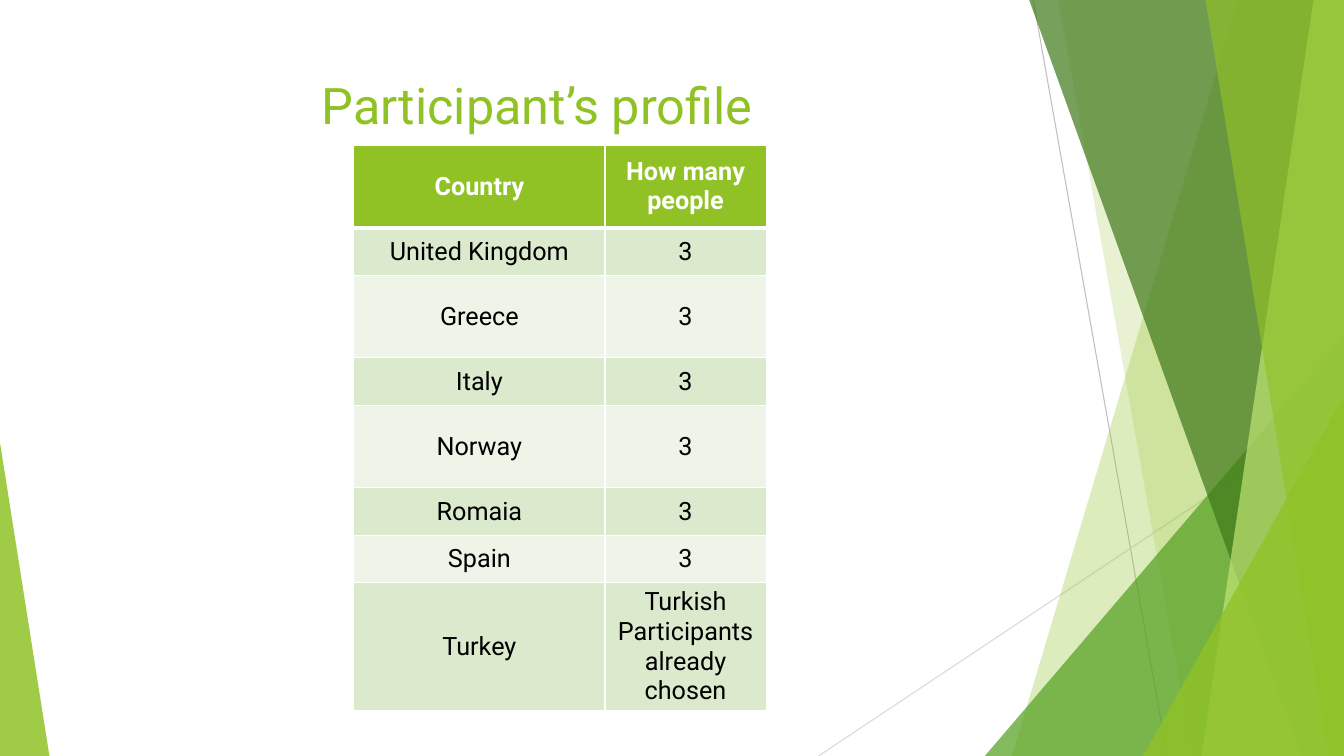
"""Build the participant profile slide."""
from dataclasses import dataclass

from lxml import etree
from pptx import Presentation, util as u
from pptx.dml.color import RGBColor
from pptx.enum import shapes, text
from pptx.oxml import ns


@dataclass(frozen=True)
class Theme:
    """Colours, font and type sizes of the slide."""
    lime: str = "90C226"
    leaf: str = "54A021"
    forest: str = "3F7819"
    pale: str = "C0E474"
    grey: str = "BFBFBF"
    silver: str = "D9D9D9"
    white: str = "FFFFFF"
    black: str = "000000"
    stripes: tuple[str, str] = ("DBE9CD", "EEF4E8")
    font: str = "Roboto"
    title_size: int = 36
    table_size: int = 18


@dataclass(frozen=True)
class Ray:
    """A thin line between two points, in percent of the slide."""
    start: tuple[float, float]
    end: tuple[float, float]
    colour: str


@dataclass(frozen=True)
class Band:
    """A panel from a slanted left edge to the slide's right edge."""
    top: float
    bottom: float
    colour: str
    opacity: int


@dataclass(frozen=True)
class Wedge:
    """A right triangle standing on the slide's bottom edge."""
    left: float
    top: float
    width: float
    apex: int
    colour: str
    opacity: int


THEME = Theme()
WIDTH, HEIGHT = u.Inches(13.333), u.Inches(7.5)
DECOR = (
    Ray((76.88, 0), (86.85, 100), THEME.grey),
    Ray((100, 53.73), (60.9, 100), THEME.silver),
    Band(92.1, 75.3, THEME.lime, 30),
    Band(78.75, 88.73, THEME.lime, 20),
    Wedge(73.28, 44.4, 26.72, 1, THEME.leaf, 72),
    Band(76.58, 96.83, THEME.forest, 70),
    Band(97.73, 89.4, THEME.pale, 70),
    Band(89.7, 98.85, THEME.lime, 65),
    Wedge(85.05, 52.4, 14.95, 1, THEME.lime, 80),
    Wedge(0, 58.53, 3.68, 0, THEME.lime, 85),
)
ROWS = (
    ("Country", "How many people"),
    ("United Kingdom", "3"),
    ("Greece", "3"),
    ("Italy", "3"),
    ("Norway", "3"),
    ("Romaia", "3"),
    ("Spain", "3"),
    ("Turkey", "Turkish Participants already chosen"),
)
COLUMN_SHARES = (18.68, 12)
SHORT, TALL, LAST = 6.27, 10.93, 16.93
ROW_SHARES = (TALL, SHORT, TALL, SHORT, TALL, SHORT, SHORT, LAST)


def across(percent: float) -> int:
    """Turn a share of the slide's width into a length."""
    return round(WIDTH * percent / 100)


def down(percent: float) -> int:
    """Turn a share of the slide's height into a length."""
    return round(HEIGHT * percent / 100)


def apply(target, values: dict) -> None:
    """Set each named attribute of the target."""
    for name, value in values.items():
        setattr(target, name, value)


def write(frame, words: str, size: int, colour: str, bold: bool) -> None:
    """Write one centred paragraph into a text frame."""
    para = frame.paragraphs[0]
    para.alignment = text.PP_ALIGN.CENTER
    span = para.add_run()
    span.text = words
    apply(span.font, {"name": THEME.font, "size": u.Pt(size), "bold": bold})
    span.font.color.rgb = RGBColor.from_string(colour)


def paint(shape, colour: str, opacity: int) -> None:
    """Give a shape a translucent fill without line or shadow."""
    shape.shadow.inherit = False
    shape.line.fill.background()
    shape.fill.solid()
    shape.fill.fore_color.rgb = RGBColor.from_string(colour)
    tint = shape.element.spPr.find(ns.qn("a:solidFill"))[0]
    etree.SubElement(tint, ns.qn("a:alpha"), val=str(opacity * 1000))


def draw_ray(page, ray: Ray) -> None:
    """Draw a thin line."""
    line = page.shapes.add_connector(
        shapes.MSO_CONNECTOR.STRAIGHT, across(ray.start[0]), down(ray.start[1]),
        across(ray.end[0]), down(ray.end[1]))
    line.line.width = u.Pt(0.75)
    line.line.color.rgb = RGBColor.from_string(ray.colour)
    etree.SubElement(line.element.spPr, ns.qn("a:effectLst"))


def draw_band(page, band: Band) -> None:
    """Draw a slanted panel."""
    outline = page.shapes.build_freeform(across(band.top), 0)
    outline.add_line_segments(
        [(WIDTH, 0), (WIDTH, HEIGHT), (across(band.bottom), HEIGHT)], close=True)
    paint(outline.convert_to_shape(), band.colour, band.opacity)


def draw_wedge(page, wedge: Wedge) -> None:
    """Draw a triangle on the bottom edge."""
    shape = page.shapes.add_shape(
        shapes.MSO_SHAPE.ISOSCELES_TRIANGLE, across(wedge.left), down(wedge.top),
        across(wedge.width), down(100 - wedge.top))
    shape.adjustments[0] = wedge.apex
    paint(shape, wedge.colour, wedge.opacity)


def draw_title(page) -> None:
    """Place and fill the title."""
    title = page.shapes.title
    apply(title, {"left": across(5.55), "top": down(8.93),
                  "width": across(70.5), "height": down(9.87)})
    apply(title.text_frame, {
        "word_wrap": True, "auto_size": text.MSO_AUTO_SIZE.NONE,
        "vertical_anchor": text.MSO_ANCHOR.MIDDLE, "margin_right": across(2.4)})
    write(title.text_frame, "Participant’s profile", THEME.title_size, THEME.lime, False)


def add_borders(cell, top: int, bottom: int) -> None:
    """Give a cell white borders, with point widths for top and bottom."""
    properties = cell._tc.get_or_add_tcPr()
    for side, points in {"L": 1, "R": 1, "T": top, "B": bottom}.items():
        line = etree.SubElement(properties, ns.qn(f"a:ln{side}"), w=str(u.Pt(points)))
        fill = etree.SubElement(line, ns.qn("a:solidFill"))
        etree.SubElement(fill, ns.qn("a:srgbClr"), val=THEME.white)


def draw_table(page) -> None:
    """Draw the table of countries and participants."""
    table = page.shapes.add_table(
        len(ROWS), len(COLUMN_SHARES), across(26.33), down(19.2),
        across(sum(COLUMN_SHARES)), down(sum(ROW_SHARES))).table
    for column, share in zip(table.columns, COLUMN_SHARES):
        column.width = across(share)
    for index, (row, share, words) in enumerate(zip(table.rows, ROW_SHARES, ROWS)):
        row.height = down(share)
        header = index == 0
        fill = THEME.lime if header else THEME.stripes[(index - 1) % 2]
        colour = THEME.white if header else THEME.black
        for cell, label in zip(row.cells, words):
            add_borders(cell, 3 if index == 1 else 1, 3 if header else 1)
            cell.fill.solid()
            cell.fill.fore_color.rgb = RGBColor.from_string(fill)
            cell.vertical_anchor = text.MSO_ANCHOR.MIDDLE
            write(cell.text_frame, label, THEME.table_size, colour, header)


def main() -> None:
    """Build and save the deck."""
    deck = Presentation()
    apply(deck, {"slide_width": WIDTH, "slide_height": HEIGHT})
    page = deck.slides.add_slide(deck.slide_layouts[5])
    painters = {Ray: draw_ray, Band: draw_band, Wedge: draw_wedge}
    for item in DECOR:
        painters[type(item)](page, item)
    draw_title(page)
    draw_table(page)
    deck.save("out.pptx")


if __name__ == "__main__":
    main()
